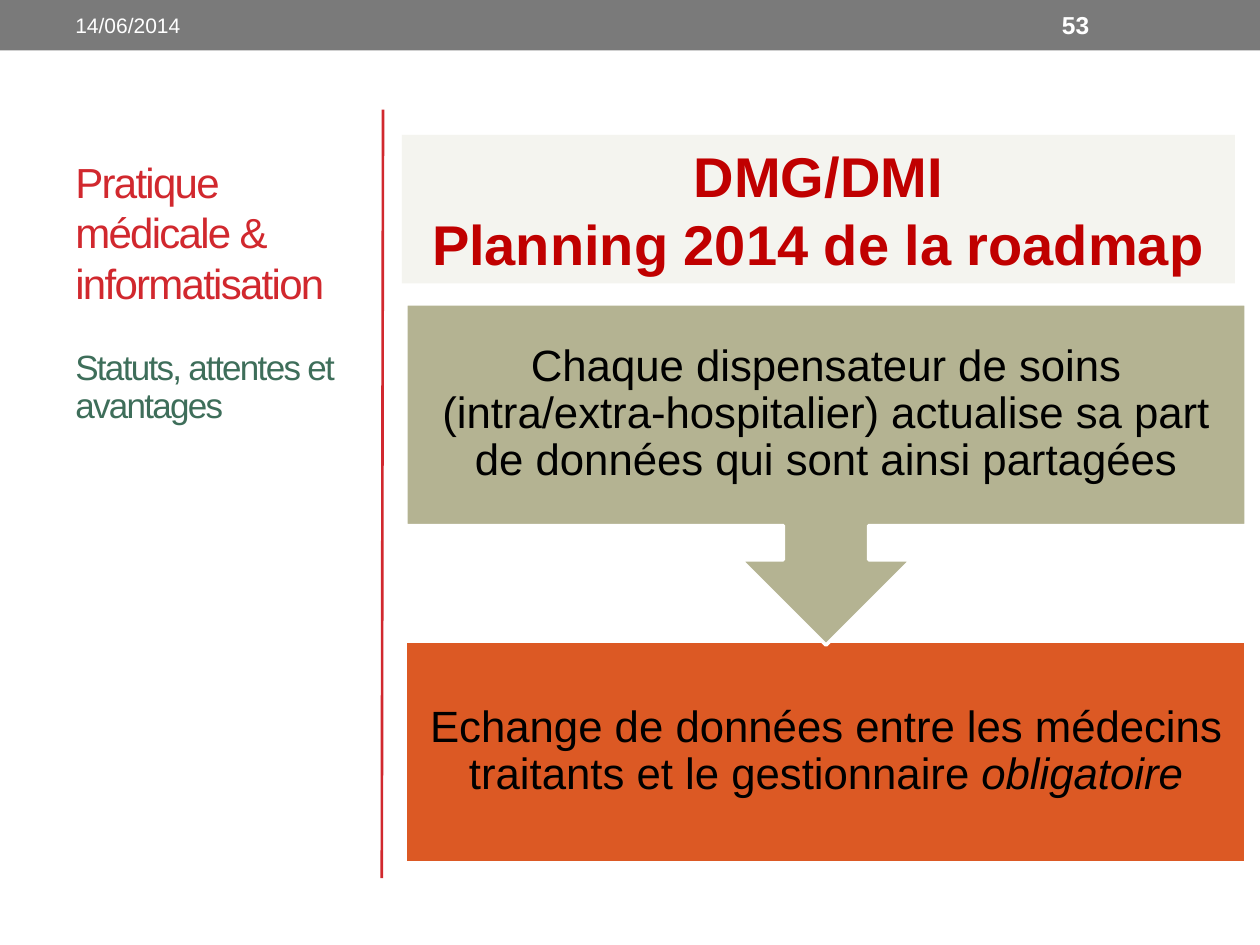
"""Build the slide on the 2014 roadmap for shared medical records."""
import pptx
import pptx.util
import pptx.dml.color
import pptx.enum.shapes
import pptx.enum.text
from lxml import etree

WIDE, HIGH = 10, 7.5
EDGE, SIDE, TOP, BAR = 0.5, 2.34, 0.87, 0.4
LEFT, SPAN, STEP = 3.22, 6.67, 1.76
RED, WHITE, BLACK = "D1282E", "FFFFFF", "000000"
KIND = pptx.enum.shapes.MSO_SHAPE
ALIGN = pptx.enum.text.PP_ALIGN
ANCHOR = pptx.enum.text.MSO_ANCHOR

LABELS = [
    ("Pratique médicale & informatisation", (EDGE, TOP, SIDE, 1.62),
     dict(size=24, color=RED, track=-1, anchor=ANCHOR.BOTTOM)),
    ("Statuts, attentes et avantages", (EDGE, 2.73, SIDE, 4.24),
     dict(size=20, color="3E6E5A", track=-1, space=0.9, anchor=ANCHOR.TOP)),
    ("14/06/2014", (EDGE, 0.02, 3.17, 0.36), dict(size=12, color=WHITE)),
    ("53", (8.33, 0.02, 1.17, 0.36), dict(size=14, color=WHITE, bold=True)),
]
STEPS = [
    (KIND.RECTANGLE, 5.09, STEP, 0, "DC5924",
     ["Echange de données entre les médecins traitants et le gestionnaire ", "obligatoire"]),
    (KIND.UP_ARROW_CALLOUT, 2.41, 2.71, 180, "B4B392",
     ["Chaque dispensateur de soins (intra/extra-hospitalier) actualise sa part "
      "de données qui sont ainsi partagées"]),
]
HEAD = "DMG/DMI\nPlanning 2014 de la roadmap"


def rgb(code):
    """Turn a hex string into a colour."""
    return pptx.dml.color.RGBColor.from_string(code)


def place(box):
    """Turn a box in inches into lengths."""
    return [pptx.util.Inches(part) for part in box]


def style(item, size, color, bold=False, track=0, space=None,
          align=ALIGN.LEFT, anchor=ANCHOR.MIDDLE):
    """Format all the text of a shape."""
    frame = item.text_frame
    frame.word_wrap = True
    frame.vertical_anchor = anchor
    for para in frame.paragraphs:
        para.alignment = align
        para.line_spacing = space
        for run in para.runs:
            font = run.font
            font.name, font.size, font.bold = "Arial", pptx.util.Pt(size), bold
            font.color.rgb = rgb(color)
            if track:
                run._r.get_or_add_rPr().set("spc", str(track * 100))


def block(slide, kind, box, fill, edge=None):
    """Add a filled shape."""
    item = slide.shapes.add_shape(kind, *place(box))
    item.shadow.inherit = False
    item.fill.solid()
    item.fill.fore_color.rgb = rgb(fill)
    if edge:
        item.line.color.rgb = rgb(edge)
        item.line.width = pptx.util.Pt(2.08)
    else:
        item.line.fill.background()
    return item


def label(slide, text, box, look):
    """Add a text box."""
    item = slide.shapes.add_textbox(*place(box))
    item.text_frame.text = text
    style(item, **look)
    return item


def rule(slide):
    """Add the line beside the title column."""
    ends = place((3.04, TOP, 3.03, 6.97))
    line = slide.shapes.add_connector(pptx.enum.shapes.MSO_CONNECTOR.STRAIGHT, *ends)
    line.line.color.rgb = rgb(RED)
    line.line.width = pptx.util.Pt(1.5)
    etree.SubElement(line._element.spPr, pptx.oxml.ns.qn("a:effectLst"))


def step(slide, kind, top, tall, turn, fill, parts):
    """Add one step of the flow with its text."""
    item = block(slide, kind, (LEFT, top, SPAN, tall), fill, WHITE)
    item.rotation = turn
    look = dict(size=25, color=BLACK, space=0.9, align=ALIGN.CENTER)
    note = label(slide, parts[0], (LEFT, top, SPAN, STEP), look)
    frame = note.text_frame
    for part in parts[1:]:
        frame.paragraphs[0].add_run().text = part
    style(note, **look)
    for run in frame.paragraphs[0].runs[1:]:
        run.font.italic = True
    pad = pptx.util.Inches(0.19)
    frame.margin_left = frame.margin_right = pad
    frame.margin_top = frame.margin_bottom = pad


def main():
    """Build and save the slide."""
    deck = pptx.Presentation()
    deck.slide_width, deck.slide_height = place((WIDE, HIGH))
    slide = deck.slides.add_slide(deck.slide_layouts[6])
    block(slide, KIND.RECTANGLE, (0, 0, WIDE, BAR), "7A7A7A")
    rule(slide)
    for text, box, look in LABELS:
        label(slide, text, box, look)
    for row in STEPS:
        step(slide, *row)
    head = block(slide, KIND.RECTANGLE, (3.19, 1.07, 6.61, 1.18), "F4F4EF")
    head.text_frame.text = HEAD
    style(head, 32, "C00000", bold=True, align=ALIGN.CENTER)
    deck.save("out.pptx")


if __name__ == "__main__":
    main()
